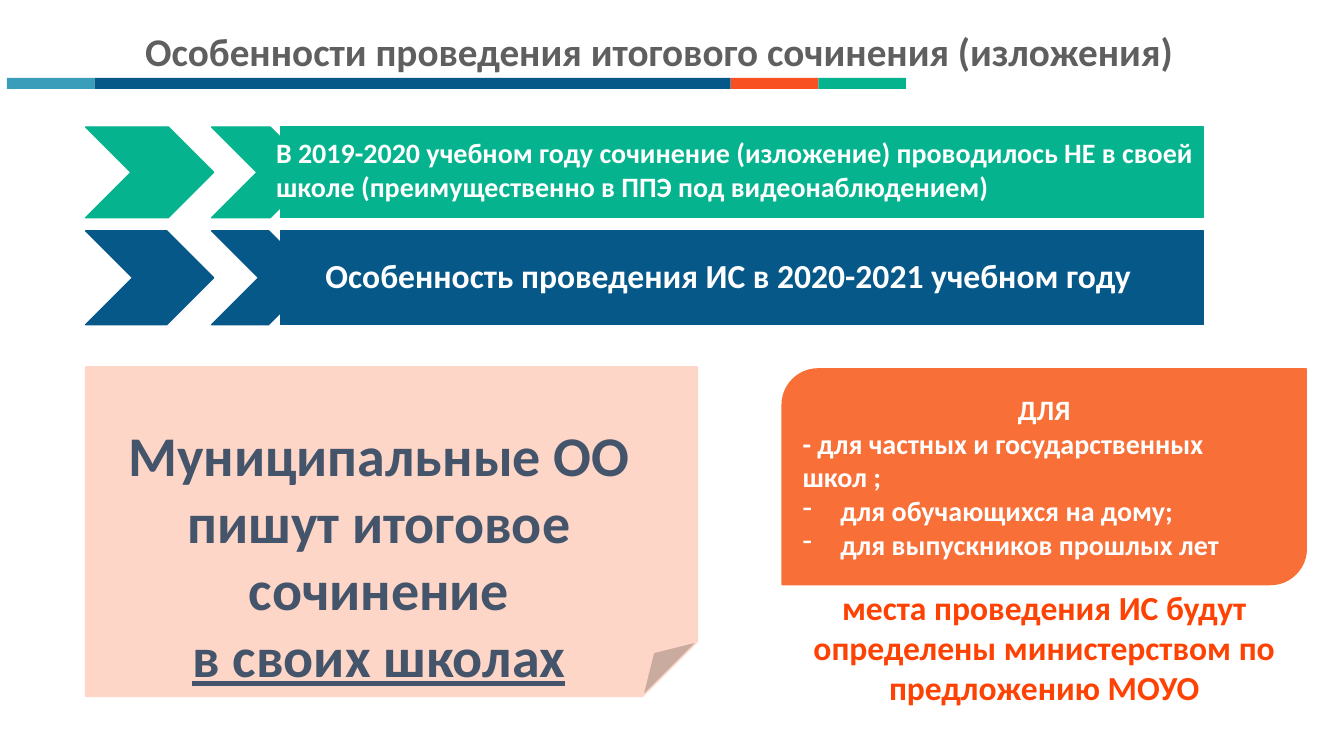
from dataclasses import dataclass

from lxml.etree import SubElement
from pptx import Presentation
from pptx.dml.color import RGBColor
from pptx.enum.shapes import MSO_SHAPE
from pptx.enum.text import MSO_ANCHOR, PP_ALIGN
from pptx.oxml.ns import qn
from pptx.shapes.autoshape import Shape
from pptx.shapes.shapetree import GroupShapes
from pptx.text.text import TextFrame
from pptx.util import Pt

WHITE = RGBColor(0xFF, 0xFF, 0xFF)
GREY = RGBColor(0x5F, 0x5F, 0x5F)
SLATE = RGBColor(0x44, 0x54, 0x6A)
TEAL = RGBColor(0x3A, 0x9D, 0xB9)
NAVY = RGBColor(0x06, 0x58, 0x89)
RED = RGBColor(0xF9, 0x50, 0x22)
GREEN = RGBColor(0x05, 0xB4, 0x8E)
ORANGE = RGBColor(0xF8, 0x6F, 0x38)
BRIGHT_ORANGE = RGBColor(0xFE, 0x42, 0x03)
PEACH = RGBColor(0xFD, 0xD6, 0xC7)

FONT = "Calibri"
BULLET_INDENT = 27


@dataclass(frozen=True)
class Box:
    left: float
    top: float
    width: float
    height: float

    def lengths(self) -> tuple[Pt, Pt, Pt, Pt]:
        return Pt(self.left), Pt(self.top), Pt(self.width), Pt(self.height)


@dataclass(frozen=True)
class Line:
    text: str
    align: PP_ALIGN = PP_ALIGN.CENTER
    bullet: bool = False
    underline: bool = False
    right_margin: float = 0


@dataclass(frozen=True)
class Banner:
    top: float
    height: float
    color: RGBColor
    text: str
    text_box: Box
    size: float


def write_lines(frame: TextFrame, lines: list[Line], size: float, color: RGBColor) -> None:
    frame.word_wrap = True
    for index, line in enumerate(lines):
        para = frame.add_paragraph() if index else frame.paragraphs[0]
        para.text = line.text
        para.alignment = line.align
        font = para.font
        font.name, font.size, font.bold = FONT, Pt(size), True
        font.color.rgb = color
        if line.underline:
            font.underline = True
        for span in para.runs:
            span.font.name = FONT
        properties = para._p.get_or_add_pPr()
        if line.right_margin:
            properties.set("marR", str(Pt(line.right_margin)))
        if line.bullet:
            properties.set("marL", str(Pt(BULLET_INDENT)))
            properties.set("indent", str(-Pt(BULLET_INDENT)))
            bullet = SubElement(properties, qn("a:buChar"))
            bullet.set("char", "-")
            properties.insert(0, bullet)


def add_text(shapes: GroupShapes, box: Box, lines: list[Line], size: float, color: RGBColor) -> None:
    write_lines(shapes.add_textbox(*box.lengths()).text_frame, lines, size, color)


def add_block(shapes: GroupShapes, kind: MSO_SHAPE, box: Box, color: RGBColor,
              outlined: bool = True) -> Shape:
    block = shapes.add_shape(kind, *box.lengths())
    block.shadow.inherit = False
    block.fill.solid()
    block.fill.fore_color.rgb = color
    if outlined:
        block.line.color.rgb = color
        block.line.width = Pt(1)
    else:
        block.line.fill.background()
    return block


# Left edge and width of the parts of a banner
BANNER_PARTS = [
    (MSO_SHAPE.CHEVRON, 61.2, 91.4),
    (MSO_SHAPE.CHEVRON, 151.2, 74.2),
    (MSO_SHAPE.RECTANGLE, 200.2, 659.5),
]
BANNERS = [
    Banner(90.7, 64.8, GREEN,
           "В 2019-2020 учебном году сочинение (изложение) проводилось НЕ в своей "
           "школе (преимущественно в ППЭ под видеонаблюдением)",
           Box(190.1, 93.6, 707.8, 55.4), 20),
    Banner(164.9, 67, NAVY, "Особенность проведения ИС в 2020-2021 учебном году",
           Box(225.4, 178.6, 707.8, 36), 24),
]
STRIPE_PARTS = [(TEAL, 62.6), (NAVY, 454.4), (RED, 62.6), (GREEN, 62.6)]


def add_banner(shapes: GroupShapes, banner: Banner) -> None:
    group = shapes.add_group_shape().shapes
    for kind, left, width in BANNER_PARTS:
        add_block(group, kind, Box(left, banner.top, width, banner.height), banner.color)
    add_text(shapes, banner.text_box, [Line(banner.text, PP_ALIGN.LEFT)], banner.size, WHITE)


def main() -> None:
    deck = Presentation()
    deck.slide_width, deck.slide_height = Pt(960), Pt(540)
    page = deck.slides.add_slide(deck.slide_layouts[6])
    shapes = page.shapes

    # Title and coloured stripe
    add_text(shapes, Box(71.3, 15.8, 798.5, 41),
             [Line("Особенности проведения итогового сочинения (изложения)")], 28, GREY)
    stripe = shapes.add_group_shape().shapes
    left = 5.0
    for color, width in STRIPE_PARTS:
        add_block(stripe, MSO_SHAPE.RECTANGLE, Box(left, 55.6, width, 7.9), color, outlined=False)
        left += width

    # Banners for the two school years
    for banner in BANNERS:
        add_banner(shapes, banner)

    # Venues set by the ministry
    add_text(shapes, Box(558.7, 415.4, 374.4, 94.3),
             [Line("места проведения ИС будут"),
              Line("определены министерством по предложению МОУО")], 24, BRIGHT_ORANGE)
    groups = add_block(shapes, MSO_SHAPE.ROUND_2_DIAG_RECTANGLE,
                       Box(558.7, 263.5, 374.4, 154.1), ORANGE)
    groups.text_frame.vertical_anchor = MSO_ANCHOR.MIDDLE
    write_lines(groups.text_frame,
                [Line("ДЛЯ"),
                 Line("- для частных и государственных школ ;", PP_ALIGN.LEFT),
                 Line("для обучающихся на дому;", PP_ALIGN.LEFT, bullet=True),
                 Line("для выпускников прошлых лет", PP_ALIGN.LEFT, bullet=True)], 20, WHITE)

    # Note on municipal schools
    note = add_block(shapes, MSO_SHAPE.FOLDED_CORNER, Box(61.2, 262.1, 437, 235.4), PEACH)
    note.text_frame.vertical_anchor = MSO_ANCHOR.TOP
    note.text_frame.margin_top = Pt(38)
    write_lines(note.text_frame,
                [Line("Муниципальные ОО", right_margin=18),
                 Line("пишут итоговое сочинение"),
                 Line("в своих школах", underline=True)], 40, SLATE)

    deck.save("out.pptx")


if __name__ == "__main__":
    main()
